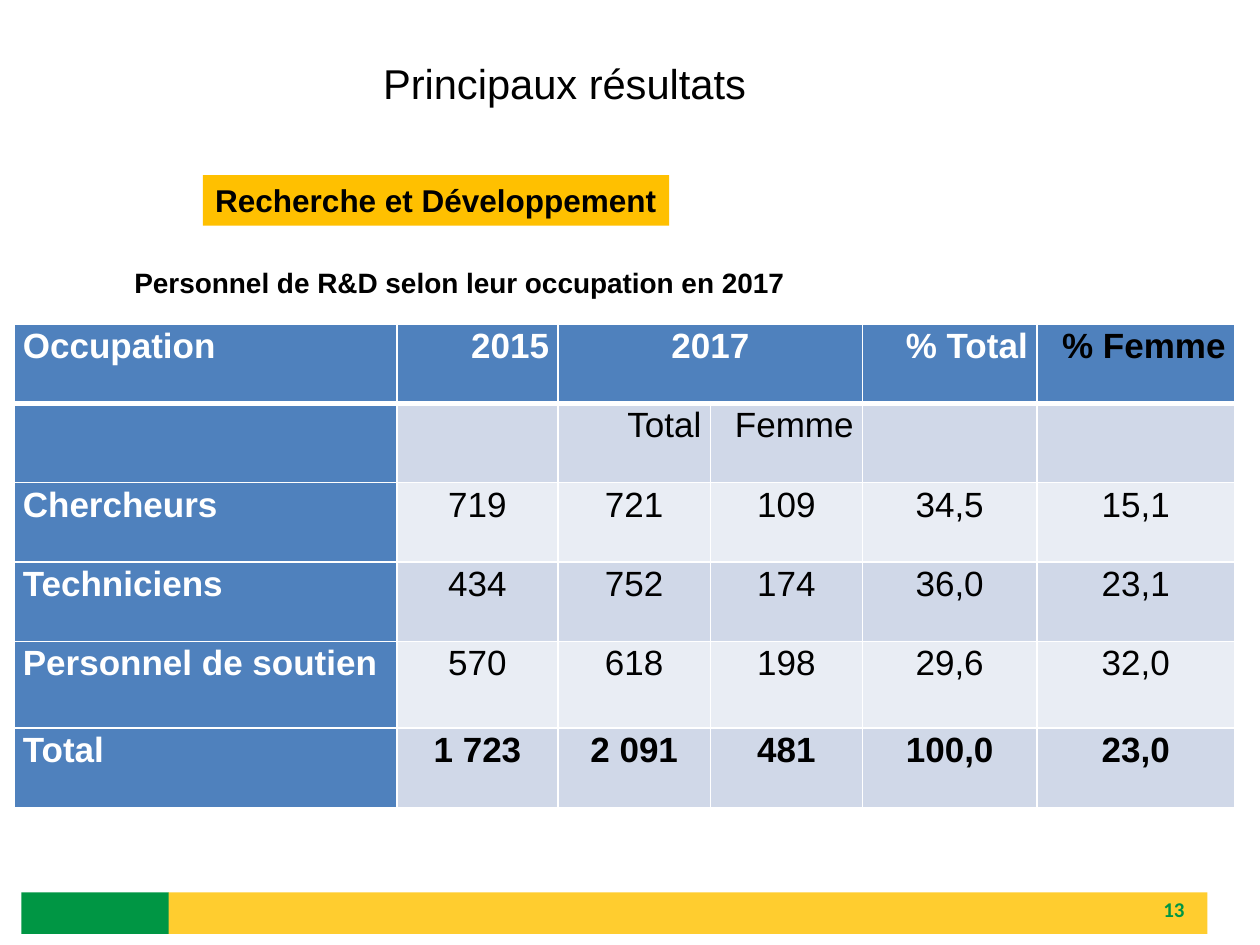
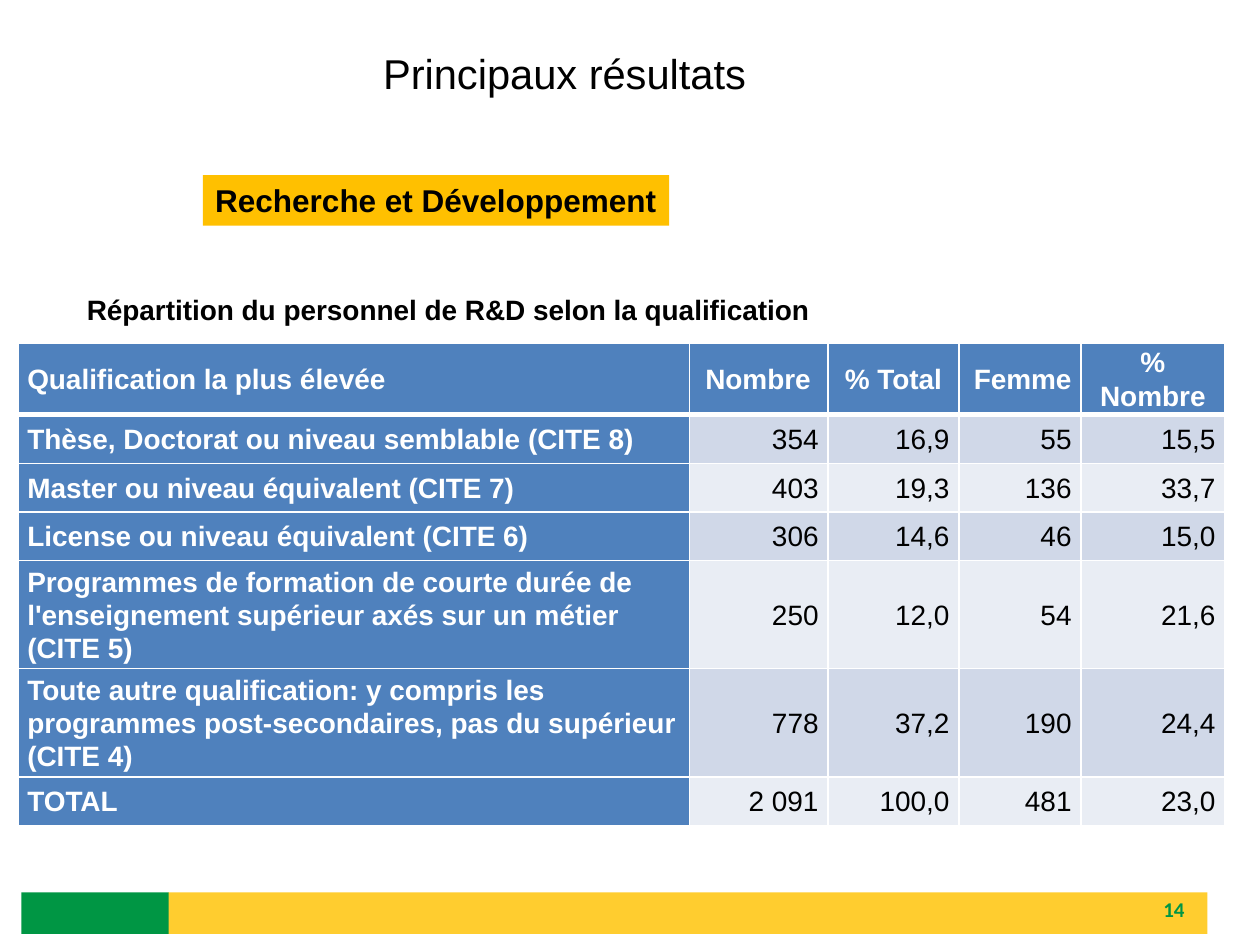
from lxml import etree
from pptx import Presentation
from pptx.dml.color import RGBColor
from pptx.enum.shapes import MSO_SHAPE
from pptx.enum.text import MSO_ANCHOR, PP_ALIGN
from pptx.oxml.ns import qn
from pptx.util import Cm, Pt

RECTANGLE = MSO_SHAPE.RECTANGLE
TOP, MIDDLE, BOTTOM = MSO_ANCHOR.TOP, MSO_ANCHOR.MIDDLE, MSO_ANCHOR.BOTTOM
ALIGNMENTS = {"l": PP_ALIGN.LEFT, "c": PP_ALIGN.CENTER, "r": PP_ALIGN.RIGHT}

BLACK, WHITE = "000000", "FFFFFF"
GREEN, YELLOW, AMBER = "009644", "FFCD2F", "FFC000"
BLUE = "4F81BD"
STRIPES = ["E9EDF4", "D0D8E8"]

SLIDES = [
    {
        "number": "13",
        "title_top": 1.32,
        "caption": "Personnel de R&D selon leur occupation en 2017",
        "caption_place": (2.46, 5.13, 18.31, 1.02),
        "table_place": (0.28, 6.53),
        "columns": [7.72, 3.25, 3.07, 3.07, 3.51, 3.99],
        "heights": [1.6, 1.6, 1.6, 1.6, 1.75, 1.6],
        "size": 20,
        "margin": 0.18,
        "anchor": TOP,
        "alignments": ["lrccrr", "lrrrrr"] + ["lccccc"] * 4,
        "merged": [((0, 2), (0, 3))],
        "black_headings": ["% Femme"],
        "bold_rows": [5],
        "rows": [
            ["Occupation", "2015", "2017", "", "% Total", "% Femme"],
            ["", "", "Total", "Femme", "", ""],
            ["Chercheurs", "719", "721", "109", "34,5", "15,1"],
            ["Techniciens", "434", "752", "174", "36,0", "23,1"],
            ["Personnel de soutien", "570", "618", "198", "29,6", "32,0"],
            ["Total", "1 723", "2 091", "481", "100,0", "23,0"],
        ],
    },
    {
        "number": "14",
        "title_top": 1.12,
        "caption": "Répartition du personnel de R&D selon la qualification",
        "caption_place": (1.5, 5.72, 17.91, 0.97),
        "table_place": (0.36, 6.91),
        "columns": [13.54, 2.79, 2.64, 2.46, 2.9],
        "heights": [1.41, 0.98, 0.98, 0.98, 2.18, 2.18, 0.98],
        "size": 16,
        "margin": 0.19,
        "anchor": MIDDLE,
        "alignments": ["lrcrc"] + ["lrrrr"] * 6,
        "merged": [],
        "black_headings": [],
        "bold_rows": [],
        "rows": [
            ["Qualification la plus élevée", "Nombre ", "% Total", "Femme", "% Nombre"],
            ["Thèse, Doctorat ou niveau semblable (CITE 8)", "354", "16,9", "55", "15,5"],
            ["Master ou niveau équivalent (CITE 7)", "403", "19,3", "136", "33,7"],
            ["License ou niveau équivalent (CITE 6)", "306", "14,6", "46", "15,0"],
            ["Programmes de formation de courte durée de l'enseignement supérieur "
             "axés sur un métier (CITE 5)", "250", "12,0", "54", "21,6"],
            ["Toute autre qualification: y compris les programmes post-secondaires, "
             "pas du supérieur (CITE 4)", "778", "37,2", "190", "24,4"],
            ["TOTAL", "2 091", "100,0", "481", "23,0"],
        ],
    },
]


def color(value):
    return RGBColor.from_string(value)


def write(frame, text, size, shade=BLACK, bold=False, align="l", anchor=TOP,
          spacing=1.0, font="Arial"):
    frame.word_wrap = True
    frame.vertical_anchor = anchor
    para = frame.paragraphs[0]
    para.alignment = ALIGNMENTS[align]
    para.line_spacing = spacing
    span = para.add_run()
    span.text = text
    span.font.name = font
    span.font.size = Pt(size)
    span.font.bold = bold
    span.font.color.rgb = color(shade)


deck = Presentation()
deck.slide_width, deck.slide_height = Cm(25.4), Cm(19.05)

for content in SLIDES:
    page = deck.slides.add_slide(deck.slide_layouts[6])

    bars = []
    for place, shade in [((3.39, 17.99, 20.95, 0.84), YELLOW),
                         ((0.43, 17.99, 2.97, 0.84), GREEN),
                         ((4.09, 3.53, 9.4, 1.02), AMBER)]:
        bar = page.shapes.add_shape(RECTANGLE, *map(Cm, place))
        bar.shadow.inherit = False
        bar.fill.solid()
        bar.fill.fore_color.rgb = color(shade)
        bar.line.fill.background()
        bars.append(bar)
    section = bars[-1].text_frame
    write(section, "Recherche et Développement", 18, bold=True)
    section.word_wrap = False

    number = page.shapes.add_textbox(Cm(18.21), Cm(17.99), Cm(5.92), Cm(0.69))
    write(number.text_frame, content["number"], 12, GREEN, True, "r", MIDDLE,
          font="Calibri")

    title = page.shapes.add_textbox(Cm(5.08), Cm(content["title_top"]), Cm(12.83), Cm(1))
    write(title.text_frame, "Principaux résultats ", 23.8, align="c", spacing=0.7)

    caption = page.shapes.add_textbox(*map(Cm, content["caption_place"]))
    write(caption.text_frame, content["caption"], 16, bold=True, anchor=BOTTOM)

    rows, columns, heights = content["rows"], content["columns"], content["heights"]
    left, top = content["table_place"]
    table = page.shapes.add_table(len(rows), len(columns), Cm(left), Cm(top),
                                  Cm(sum(columns)), Cm(sum(heights))).table
    for column, width in zip(table.columns, columns):
        column.width = Cm(width)
    for row, height in zip(table.rows, heights):
        row.height = Cm(height)
    for (first_row, first_column), (last_row, last_column) in content["merged"]:
        table.cell(first_row, first_column).merge(table.cell(last_row, last_column))

    for row_index, values in enumerate(rows):
        for column_index, value in enumerate(values):
            cell = table.cell(row_index, column_index)
            heading = row_index == 0 or column_index == 0
            cell.margin_left = cell.margin_right = Cm(content["margin"])
            cell.margin_top = cell.margin_bottom = Cm(0)
            cell.vertical_anchor = content["anchor"]
            if value:
                white = heading and value not in content["black_headings"]
                write(cell.text_frame, value, content["size"],
                      WHITE if white else BLACK,
                      heading or row_index in content["bold_rows"],
                      content["alignments"][row_index][column_index],
                      content["anchor"], 1.07)
            properties = cell._tc.get_or_add_tcPr()
            for side in ("L", "R", "T", "B"):
                thick = (side, row_index) in [("B", 0), ("T", 1)]
                border = etree.SubElement(properties, qn(f"a:ln{side}"),
                                          w=str(Pt(3 if thick else 1)))
                fill = etree.SubElement(border, qn("a:solidFill"))
                etree.SubElement(fill, qn("a:srgbClr"), val=WHITE)
            cell.fill.solid()
            cell.fill.fore_color.rgb = color(BLUE if heading else STRIPES[row_index % 2])

deck.save("out.pptx")
